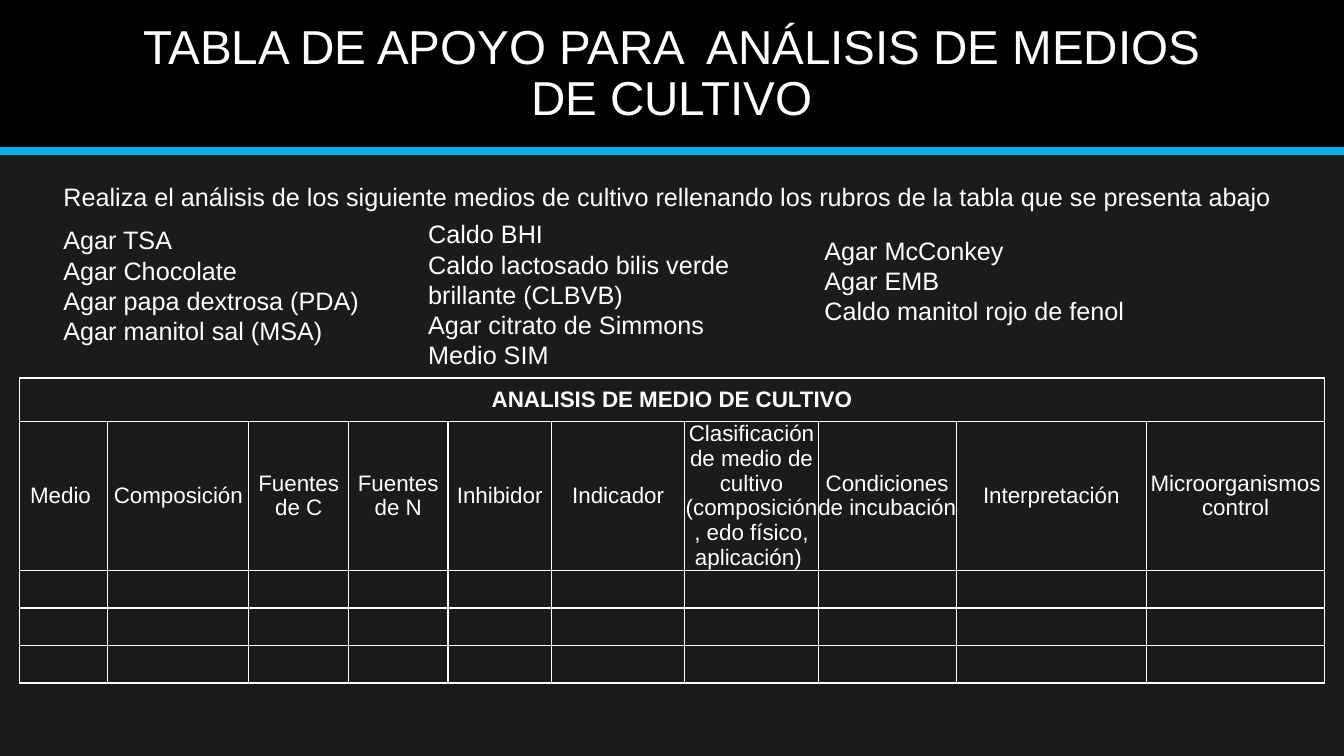
from lxml.etree import SubElement
from pptx import Presentation
from pptx.dml.color import RGBColor
from pptx.enum.shapes import MSO_CONNECTOR, MSO_SHAPE
from pptx.enum.text import MSO_ANCHOR, MSO_AUTO_SIZE, PP_ALIGN
from pptx.oxml.ns import qn
from pptx.util import Pt

SLIDE_WIDTH, SLIDE_HEIGHT = 960, 540
BAND_HEIGHT = 108
WHITE = "FFFFFF"

INSTRUCTION = ("Realiza el análisis de los siguiente medios de cultivo "
               "rellenando los rubros de la tabla que se presenta abajo")
# Left, top, width, height, wrap, lines
TEXT_BOXES = [
    (38.2, 126, 889.9, 29, False, [INSTRUCTION]),
    (38.2, 157, 227.5, 94.3, False,
     ["Agar TSA", "Agar Chocolate", "Agar papa dextrosa (PDA)", "Agar manitol sal (MSA)"]),
    (298.8, 152.6, 283, 116.6, True,
     ["Caldo BHI", "Caldo lactosado bilis verde brillante (CLBVB)",
      "Agar citrato de Simmons", "Medio SIM"]),
    (581.8, 164.2, 283, 72.7, True,
     ["Agar McConkey", "Agar EMB", "Caldo manitol rojo de fenol"]),
]

TABLE_TITLE = "ANALISIS DE MEDIO DE CULTIVO"
# Heading and width of each column
COLUMNS = [
    ("Medio ", 63.1), ("Composición", 100.8), ("Fuentes de C", 71.1),
    ("Fuentes de N", 71.1), ("Inhibidor", 73.9), ("Indicador", 95.3),
    ("Clasificación de medio de cultivo (composición, edo físico, aplicación) ", 95.3),
    ("Condiciones de incubación", 98.6), ("Interpretación", 135.9),
    ("Microorganismos control", 127.4),
]
ROW_HEIGHTS = [30.8, 92.2, 26.8, 26.8, 26.8]


def color(value):
    return RGBColor.from_string(value)


def style_font(font, size, bold=False):
    font.name = "Arial"
    font.size = Pt(size)
    font.bold = bold
    font.color.rgb = color(WHITE)


def add_span(para, text, size, bold=False):
    span = para.add_run()
    span.text = text
    style_font(span.font, size, bold)


def add_band(page):
    band = page.shapes.add_shape(MSO_SHAPE.RECTANGLE, 0, 0, Pt(SLIDE_WIDTH), Pt(BAND_HEIGHT))
    band.shadow.inherit = False
    band.fill.solid()
    band.fill.fore_color.rgb = color("000000")
    band.line.fill.background()
    rule = page.shapes.add_connector(
        MSO_CONNECTOR.STRAIGHT, 0, Pt(BAND_HEIGHT), Pt(SLIDE_WIDTH), Pt(BAND_HEIGHT))
    rule.line.color.rgb = color("00B0EA")
    rule.line.width = Pt(6)
    SubElement(rule._element.spPr, qn("a:effectLst"))
    # The title placeholder belongs in front of the band
    tree = page.shapes._spTree
    tree.append(page.shapes.title._element)


def fill_title(page, text):
    title = page.shapes.title
    title.left, title.top, title.width, title.height = Pt(84), Pt(10), Pt(792), Pt(86.4)
    frame = title.text_frame
    frame.auto_size = MSO_AUTO_SIZE.NONE
    frame.word_wrap = True
    frame.vertical_anchor = MSO_ANCHOR.MIDDLE
    para = frame.paragraphs[0]
    para.alignment = PP_ALIGN.CENTER
    para.line_spacing = 0.9
    add_span(para, text, 34)


def add_text(page, left, top, width, height, wrap, lines):
    box = page.shapes.add_textbox(Pt(left), Pt(top), Pt(width), Pt(height))
    frame = box.text_frame
    frame.word_wrap = wrap
    frame.auto_size = MSO_AUTO_SIZE.SHAPE_TO_FIT_TEXT
    for index, line in enumerate(lines):
        para = frame.add_paragraph() if index else frame.paragraphs[0]
        add_span(para, line, 18)


def add_borders(cell):
    properties = cell._tc.get_or_add_tcPr()
    for side in ("a:lnL", "a:lnR", "a:lnT", "a:lnB"):
        border = SubElement(properties, qn(side), w=str(Pt(1)))
        fill = SubElement(border, qn("a:solidFill"))
        SubElement(fill, qn("a:srgbClr"), val=WHITE)


def format_cell(cell):
    cell.margin_left = cell.margin_right = cell.margin_top = cell.margin_bottom = 0
    cell.vertical_anchor = MSO_ANCHOR.MIDDLE
    add_borders(cell)
    cell.fill.background()
    para = cell.text_frame.paragraphs[0]
    para.alignment = PP_ALIGN.CENTER
    style_font(para.font, 16)


def add_analysis_table(page):
    width = sum(column_width for _, column_width in COLUMNS)
    frame = page.shapes.add_table(len(ROW_HEIGHTS), len(COLUMNS), Pt(13.9), Pt(270),
                                  Pt(width), Pt(sum(ROW_HEIGHTS)))
    table = frame.table
    table.first_row = table.horz_banding = False
    for row, height in zip(table.rows, ROW_HEIGHTS):
        row.height = Pt(height)
    for cell in table.iter_cells():
        format_cell(cell)
    for index, (heading, column_width) in enumerate(COLUMNS):
        table.columns[index].width = Pt(column_width)
        add_span(table.cell(1, index).text_frame.paragraphs[0], heading, 16)
    banner = table.cell(0, 0)
    banner.merge(table.cell(0, len(COLUMNS) - 1))
    add_span(banner.text_frame.paragraphs[0], TABLE_TITLE, 16, bold=True)


def main():
    deck = Presentation()
    deck.slide_width, deck.slide_height = Pt(SLIDE_WIDTH), Pt(SLIDE_HEIGHT)
    page = deck.slides.add_slide(deck.slide_layouts[5])
    page.background.fill.solid()
    page.background.fill.fore_color.rgb = color("1B1B1B")
    add_band(page)
    fill_title(page, "TABLA DE APOYO PARA  ANÁLISIS DE MEDIOS DE CULTIVO")
    add_analysis_table(page)
    for text_box in TEXT_BOXES:
        add_text(page, *text_box)
    deck.save("out.pptx")


if __name__ == "__main__":
    main()
